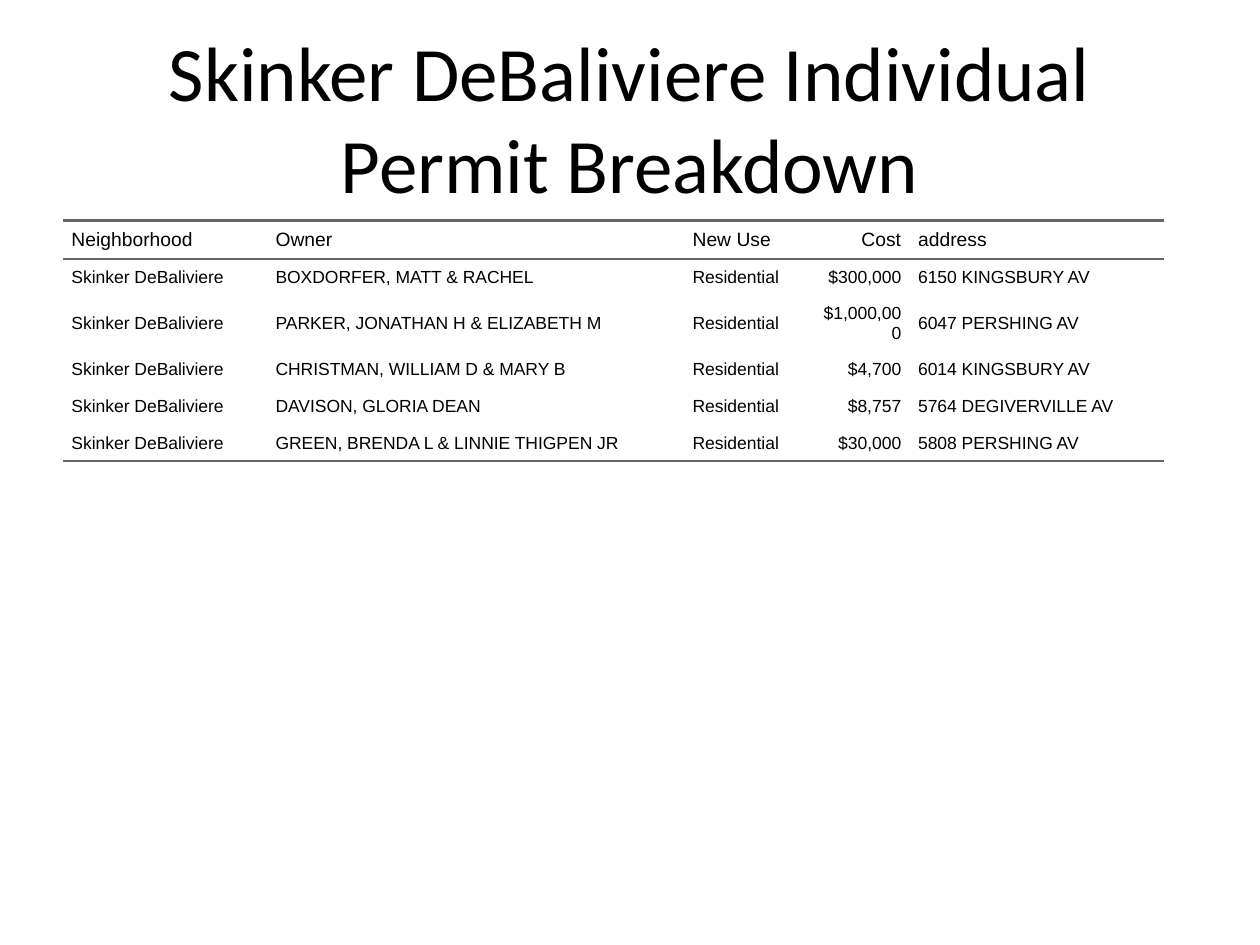
"""Build the Skinker DeBaliviere permit breakdown slide."""
from lxml.etree import SubElement
from pptx import Presentation
from pptx.dml.color import RGBColor
from pptx.enum.text import MSO_ANCHOR, MSO_AUTO_SIZE, PP_ALIGN
from pptx.oxml.ns import qn
from pptx.util import Inches, Pt

TITLE = "Skinker DeBaliviere Individual Permit Breakdown"
NEIGHBORHOOD = "Skinker DeBaliviere"
USE = "Residential"
HEADER = ("Neighborhood", "Owner", "New Use", "Cost", "address")
PERMITS = [
    ("BOXDORFER, MATT & RACHEL", "$300,000", "6150 KINGSBURY AV"),
    ("PARKER, JONATHAN H & ELIZABETH M", "$1,000,000", "6047 PERSHING AV"),
    ("CHRISTMAN, WILLIAM D & MARY B", "$4,700", "6014 KINGSBURY AV"),
    ("DAVISON, GLORIA DEAN", "$8,757", "5764 DEGIVERVILLE AV"),
    ("GREEN, BRENDA L & LINNIE THIGPEN JR", "$30,000", "5808 PERSHING AV"),
]
COLUMN_WIDTHS = (1.62, 3.31, 1.04, 0.75, 2.02)
ROW_HEIGHT = 0.25
COST_COLUMN = HEADER.index("Cost")
CELL_MARGIN = Pt(4.85)
BLACK, RULE = "000000", "666666"


def write(frame, text, font, size, align):
    frame.text = text
    para = frame.paragraphs[0]
    para.alignment = align
    span = para.runs[0]
    span.font.name = font
    span.font.size = Pt(size)
    span.font.color.rgb = RGBColor.from_string(BLACK)


def set_borders(cell, ruled):
    properties = cell._tc.get_or_add_tcPr()
    for side in ("lnL", "lnR", "lnT", "lnB"):
        line = SubElement(properties, qn(f"a:{side}"), w=str(Pt(1.5)))
        if side in ruled:
            fill = SubElement(line, qn("a:solidFill"))
            SubElement(fill, qn("a:srgbClr"), val=RULE)
        else:
            SubElement(line, qn("a:noFill"))


def add_title(page):
    box = page.shapes.add_textbox(Inches(0.5), Inches(0.3), Inches(9), Inches(1.25))
    frame = box.text_frame
    frame.word_wrap = True
    frame.auto_size = MSO_AUTO_SIZE.NONE
    frame.vertical_anchor = MSO_ANCHOR.MIDDLE
    write(frame, TITLE, "Calibri", 44, PP_ALIGN.CENTER)


def add_permits(page):
    rows = [HEADER] + [
        (NEIGHBORHOOD, owner, USE, cost, address) for owner, cost, address in PERMITS
    ]
    table = page.shapes.add_table(
        len(rows), len(HEADER), Inches(0.5), Inches(1.75), Inches(9), Inches(4.95)
    ).table
    table.first_row = table.horz_banding = False
    for column, width in zip(table.columns, COLUMN_WIDTHS):
        column.width = Inches(width)
    for row_index, values in enumerate(rows):
        table.rows[row_index].height = Inches(ROW_HEIGHT)
        ruled = set()
        if row_index in (0, 1):
            ruled.add("lnT")
        if row_index in (0, len(rows) - 1):
            ruled.add("lnB")
        for column_index, value in enumerate(values):
            cell = table.cell(row_index, column_index)
            cell.margin_left = cell.margin_right = CELL_MARGIN
            cell.margin_top = cell.margin_bottom = CELL_MARGIN
            cell.vertical_anchor = MSO_ANCHOR.MIDDLE
            set_borders(cell, ruled)
            cell.fill.background()
            align = PP_ALIGN.RIGHT if column_index == COST_COLUMN else PP_ALIGN.LEFT
            write(cell.text_frame, value, "Arial", 10 if row_index else 11, align)


def main():
    deck = Presentation()
    deck.slide_width, deck.slide_height = Inches(10), Inches(7.5)
    page = deck.slides.add_slide(deck.slide_layouts[6])
    add_title(page)
    add_permits(page)
    deck.save("out.pptx")


if __name__ == "__main__":
    main()
